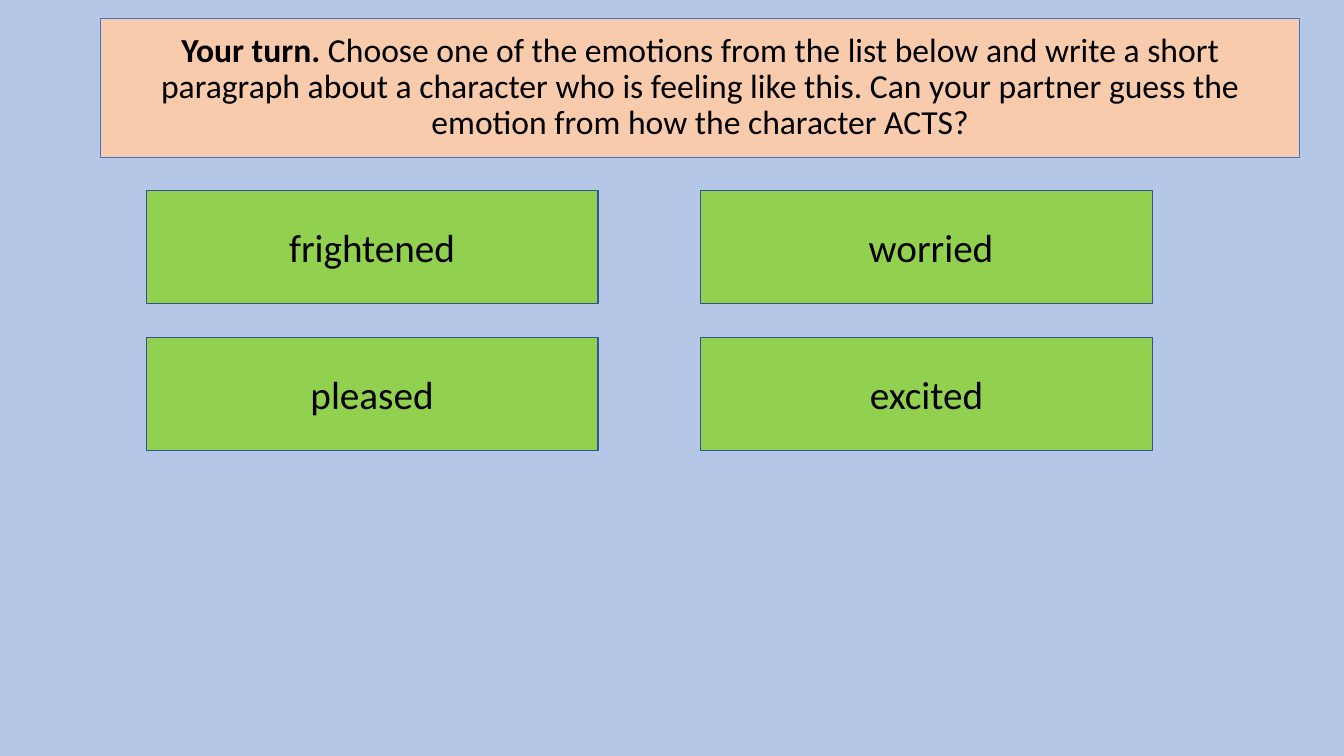
from dataclasses import dataclass

from pptx import Presentation
from pptx.dml.color import RGBColor
from pptx.enum import shapes, text
from pptx.util import Inches, Pt

PROMPT = [
    ("Your turn. ", True),
    ("Choose one of the emotions from the list below and write a short paragraph "
     "about a character who is feeling like this. Can your partner guess the "
     "emotion from how the character ACTS?", False),
]
EMOTIONS = [
    ["frightened", " worried"],
    ["pleased", "excited"],
]


@dataclass(frozen=True)
class Theme:
    font: str = "Calibri"
    background: str = "B4C7E7"
    ink: str = "000000"
    title_fill: str = "F8CBAD"
    title_line: str = "4472C4"
    card_fill: str = "92D050"
    card_line: str = "325491"
    title_size: int = 24
    card_size: int = 28


THEME = Theme()
TITLE_BOX = (1, 0.18, 11.89, 1.38)
GRID_LEFT, GRID_TOP = 1.45, 1.89
CARD_W, CARD_H = 4.48, 1.12
STEP_X, STEP_Y = 5.5, 1.46


def paint(sp, fill, line, width):
    sp.fill.solid()
    sp.fill.fore_color.rgb = RGBColor.from_string(fill)
    sp.line.color.rgb = RGBColor.from_string(line)
    sp.line.width = Pt(width)


def format_text(sp, size):
    tf = sp.text_frame
    tf.word_wrap = True
    tf.auto_size = text.MSO_AUTO_SIZE.NONE
    tf.vertical_anchor = text.MSO_ANCHOR.MIDDLE
    p = tf.paragraphs[0]
    p.alignment = text.PP_ALIGN.CENTER
    for r in p.runs:
        r.font.name = THEME.font
        r.font.size = Pt(size)
        r.font.color.rgb = RGBColor.from_string(THEME.ink)


def add_prompt(slide):
    sp = slide.shapes.title
    sp.left, sp.top, sp.width, sp.height = map(Inches, TITLE_BOX)
    paint(sp, THEME.title_fill, THEME.title_line, 0.75)
    p = sp.text_frame.paragraphs[0]
    p.line_spacing = 0.9
    for words, bold in PROMPT:
        r = p.add_run()
        r.text = words
        r.font.bold = bold
    format_text(sp, THEME.title_size)


def add_card(slide, emotion, row, col):
    left = GRID_LEFT + col * STEP_X
    top = GRID_TOP + row * STEP_Y
    sp = slide.shapes.add_shape(
        shapes.MSO_SHAPE.RECTANGLE,
        Inches(left), Inches(top), Inches(CARD_W), Inches(CARD_H))
    sp.shadow.inherit = False
    paint(sp, THEME.card_fill, THEME.card_line, 1)
    sp.text_frame.text = emotion
    format_text(sp, THEME.card_size)


def main():
    prs = Presentation()
    prs.slide_width, prs.slide_height = Inches(13.33), Inches(7.5)
    slide = prs.slides.add_slide(prs.slide_layouts[5])
    slide.background.fill.solid()
    slide.background.fill.fore_color.rgb = RGBColor.from_string(THEME.background)
    add_prompt(slide)
    for row, emotions in enumerate(EMOTIONS):
        for col, emotion in enumerate(emotions):
            add_card(slide, emotion, row, col)
    prs.save("out.pptx")


if __name__ == "__main__":
    main()
